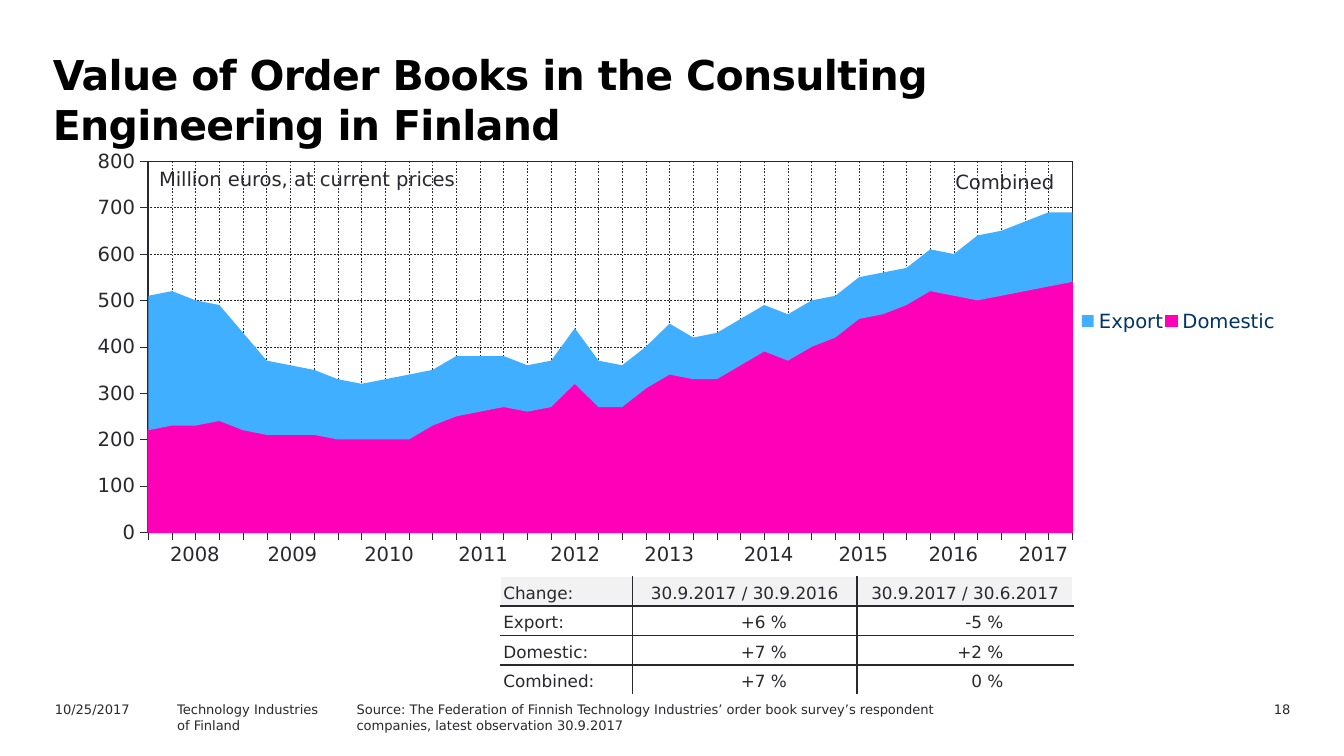
import pptx
import pptx.util
import pptx.chart.data
import pptx.dml.color
import pptx.enum.chart
import pptx.enum.dml
import pptx.enum.text
import pptx.oxml
import pptx.oxml.ns

Pt = pptx.util.Pt
RGB = pptx.dml.color.RGBColor
ALIGN = pptx.enum.text.PP_ALIGN
INK = RGB(0x29, 0x28, 0x2E)
BLACK = RGB(0, 0, 0)
WHITE = RGB(255, 255, 255)
GREY = RGB(0xF2, 0xF2, 0xF2)
NAVY = RGB(0, 0x33, 0x66)
PINK = RGB(0xFF, 0, 0xB8)
BLUE = RGB(0x40, 0xAF, 0xFF)
FONT = "DejaVu Sans"
WIDTH = pptx.util.Inches(10)
HEIGHT = WIDTH * 9 // 16

HOME = [220, 230, 230, 240, 220, 210, 210, 210, 200, 200,
        200, 200, 230, 250, 260, 270, 260, 270, 320, 270,
        270, 310, 340, 330, 330, 360, 390, 370, 400, 420,
        460, 470, 490, 520, 510, 500, 510, 520, 530, 540]
ABROAD = [290, 290, 270, 250, 210, 160, 150, 140, 130, 120,
          130, 140, 120, 130, 120, 110, 100, 100, 120, 100,
          90, 90, 110, 90, 100, 100, 100, 100, 100, 90,
          90, 90, 80, 90, 90, 140, 140, 150, 160, 150]
CHANGE = [["Change:", "30.9.2017 / 30.9.2016", "30.9.2017 / 30.6.2017"],
          ["Export:", "+6 %", "-5 %"],
          ["Domestic:", "+7 %", "+2 %"],
          ["Combined:", "+7 %", "0 %"]]


def wide(share):
    return int(WIDTH * share / 100)


def tall(share):
    return int(HEIGHT * share / 100)


def area(left, top, width, height):
    return wide(left), tall(top), wide(width), tall(height)


def style(font, size, color=INK, bold=False):
    look = {"name": FONT, "size": Pt(size), "bold": bold}
    for key, value in look.items():
        setattr(font, key, value)
    font.color.rgb = color


def add_text(slide, place, lines, size=7, color=INK, bold=False,
             align=ALIGN.LEFT, wrap=True):
    frame = slide.shapes.add_textbox(*area(*place)).text_frame
    frame.word_wrap = wrap
    for index, line in enumerate(lines):
        para = frame.paragraphs[0] if index == 0 else frame.add_paragraph()
        para.alignment = align
        run = para.add_run()
        run.text = line
        style(run.font, size, color, bold)
    return frame


def add_title(slide, text):
    frame = add_text(slide, (2.8, 5.51, 87.4, 12.62), [text], 22, BLACK, True)
    para = frame.paragraphs[0]
    para.line_spacing = Pt(27)
    props = para._p.get_or_add_pPr()
    props.set("marL", str(wide(0.15)))
    props.set("indent", "0")
    para.runs[0].font._element.set("spc", "-34")


def set_place(parent, index, shares, inner=False):
    for old in parent.findall(pptx.oxml.ns.qn("c:layout")):
        parent.remove(old)
    parts = '<c:layoutTarget val="inner"/>' if inner else ""
    for key in "xy":
        parts += f'<c:{key}Mode val="edge"/>'
    for key, share in zip("xywh", shares):
        parts += f'<c:{key} val="{share / 100}"/>'
    parent.insert(index, pptx.oxml.parse_xml(
        f'<c:layout {pptx.oxml.ns.nsdecls("c")}>'
        f'<c:manualLayout>{parts}</c:manualLayout></c:layout>'))


def set_line(line, width, color=INK, dash=None):
    line.color.rgb = color
    line.width = Pt(width)
    if dash:
        line.dash_style = dash


def add_chart(slide):
    kinds = pptx.enum.chart
    data = pptx.chart.data.CategoryChartData(number_format="#,##0")
    data.categories = [str(n + 1) for n in range(len(HOME))]
    data.add_series("Domestic", HOME)
    data.add_series("Export", ABROAD)
    chart = slide.shapes.add_chart(
        kinds.XL_CHART_TYPE.AREA_STACKED,
        *area(4.15, 19.73, 91.8, 55.47), data).chart
    chart.has_title = False
    style(chart.font, 10.5)
    plot = chart.plots[0]
    plot.vary_by_categories = False
    for series, color in zip(plot.series, (PINK, BLUE)):
        series.format.fill.solid()
        series.format.fill.fore_color.rgb = color
    set_line(plot.series[0].format.line, 0.88, PINK)

    base, scale = chart.category_axis, chart.value_axis
    for axis in (base, scale):
        axis.has_major_gridlines = True
        axis.major_tick_mark = kinds.XL_TICK_MARK.OUTSIDE
        axis.minor_tick_mark = kinds.XL_TICK_MARK.NONE
        set_line(axis.format.line, 0.22)
        set_line(axis.major_gridlines.format.line, 0.25,
                 dash=pptx.enum.dml.MSO_LINE.DASH)
    base.tick_label_position = kinds.XL_TICK_LABEL_POSITION.NONE
    look = {"minimum_scale": 0, "maximum_scale": 800, "major_unit": 100}
    for key, value in look.items():
        setattr(scale, key, value)
    style(scale.tick_labels.font, 10.5)
    scale.tick_labels.number_format = "#,##0"
    scale.tick_labels.number_format_is_linked = False

    chart.has_legend = True
    legend = chart.legend
    legend.position = kinds.XL_LEGEND_POSITION.RIGHT
    legend.include_in_layout = False
    style(legend.font, 10.5, NAVY)
    set_place(legend._element, 1, (83, 37, 16, 8))

    root = chart._chartSpace
    for cross in root.xpath(".//c:crossBetween"):
        cross.set("val", "midCat")
    field = root.xpath(".//c:plotArea")[0]
    set_place(field, 0, (7.5, 2.9, 74.9, 88.5), True)
    field.append(pptx.oxml.parse_xml(
        f'<c:spPr {pptx.oxml.ns.nsdecls("c", "a")}><a:noFill/>'
        f'<a:ln w="{Pt(0.88)}"><a:solidFill><a:srgbClr val="{INK}"/>'
        '</a:solidFill></a:ln></c:spPr>'))


def set_edge(cell, side, color):
    paint = "<a:noFill/>"
    if color is not None:
        paint = f'<a:solidFill><a:srgbClr val="{color}"/></a:solidFill>'
    cell._tc.get_or_add_tcPr().append(pptx.oxml.parse_xml(
        f'<a:ln{side} {pptx.oxml.ns.nsdecls("a")} w="{Pt(1)}">'
        f'{paint}</a:ln{side}>'))


def add_table(slide, place, widths, texts):
    rows, cols = len(texts), len(widths)
    table = slide.shapes.add_table(rows, cols, *area(*place)).table
    table.first_row = table.horz_banding = False
    for col, width in zip(table.columns, widths):
        col.width = wide(width)
    return [(r, c, table.cell(r, c), text)
            for r, line in enumerate(texts) for c, text in enumerate(line)]


def fill_cell(cell, text, size, align, edges, fill=None):
    for side, color in zip("LRTB", edges):
        set_edge(cell, side, color)
    if fill is None:
        cell.fill.background()
    else:
        cell.fill.solid()
        cell.fill.fore_color.rgb = fill
    para = cell.text_frame.paragraphs[0]
    para.alignment = align
    run = para.add_run()
    run.text = text
    style(run.font, size)


def add_years(slide):
    widths = (7, 7.5, 6.9, 7.1, 6.6, 7.4, 7.4, 6.7, 6.7, 6.7)
    years = [str(2008 + n) for n in range(len(widths))]
    for r, c, cell, text in add_table(
            slide, (11, 71.05, 70.2, 4.44), widths, [years]):
        fill_cell(cell, text, 10.5, ALIGN.CENTER, [None] * 4)


def add_change(slide):
    pad = wide(0.2)
    for r, c, cell, text in add_table(
            slide, (37.25, 76.27, 42.6, 15.64), (9.8, 16.7, 16.1), CHANGE):
        outer = (c == 0, c == 2, r == 0, r == 3)
        edges = [WHITE if flag else INK for flag in outer]
        figure = r > 0 and c > 0
        align = ALIGN.LEFT if c == 0 else ALIGN.CENTER
        fill_cell(cell, text, 9, ALIGN.RIGHT if figure else align,
                  edges, WHITE if r else GREY)
        look = {"margin_left": pad, "margin_top": pad, "margin_bottom": pad,
                "margin_right": wide(5.2) if figure else pad,
                "vertical_anchor": pptx.enum.text.MSO_ANCHOR.BOTTOM}
        for key, value in look.items():
            setattr(cell, key, value)


def main():
    deck = pptx.Presentation()
    deck.slide_width, deck.slide_height = WIDTH, HEIGHT
    slide = deck.slides.add_slide(deck.slide_layouts[6])
    add_title(slide, "Value of Order Books in the Consulting Engineering in Finland")
    add_chart(slide)
    add_years(slide)
    add_text(slide, (10.85, 21.25, 24.4, 4.8),
             ["Million euros, at current prices"], 10.5, wrap=False)
    add_change(slide)
    add_text(slide, (70.1, 21.6, 10.6, 4.8), ["Combined"], 10.5, wrap=False)
    add_text(slide, (3.1, 91.95, 10, 3.2), ["10/25/2017"])
    add_text(slide, (12.2, 91.95, 18, 3.2),
             ["Technology Industries", "of Finland"])
    add_text(slide, (25.55, 91.95, 50, 4.62), [
        "Source: The Federation of Finnish Technology Industries’ order book "
        "survey’s respondent companies, latest observation 30.9.2017"])
    add_text(slide, (87.6, 91.95, 9.4, 3.2), ["18"], align=ALIGN.RIGHT)
    deck.save("out.pptx")


if __name__ == "__main__":
    main()
